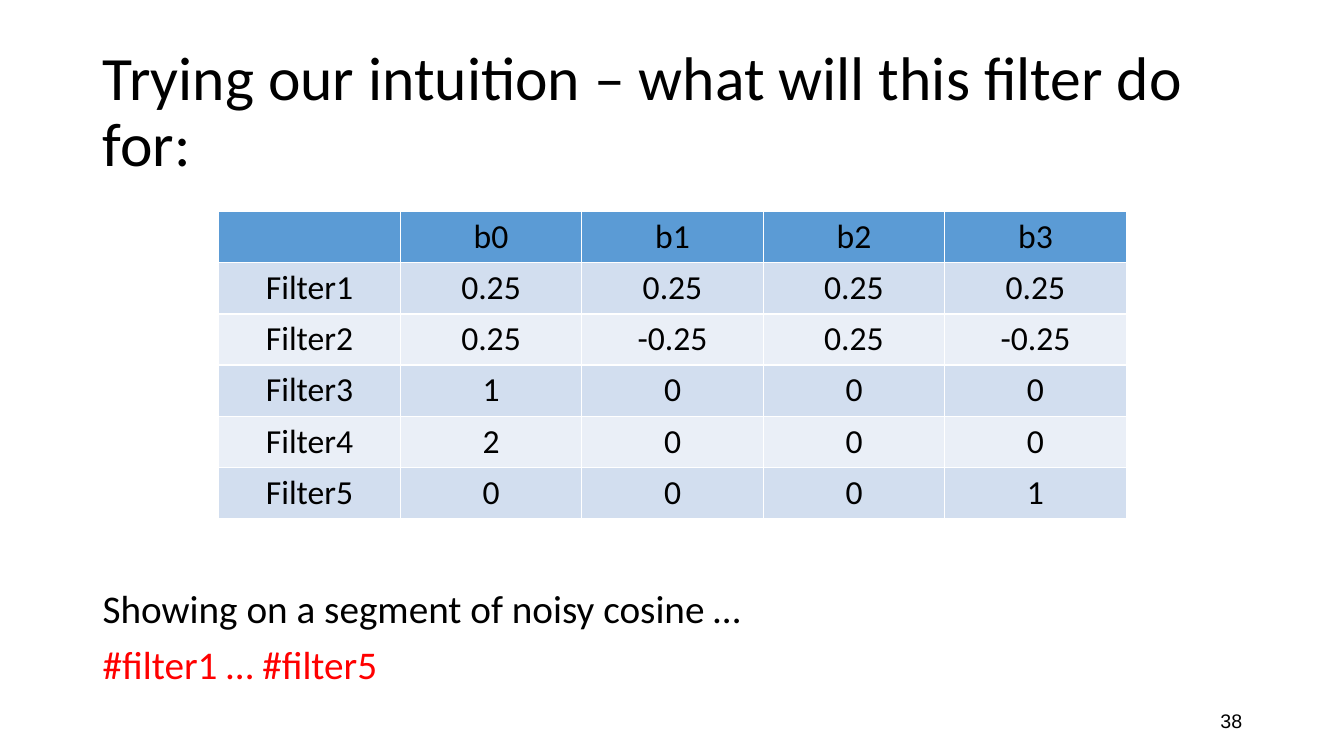
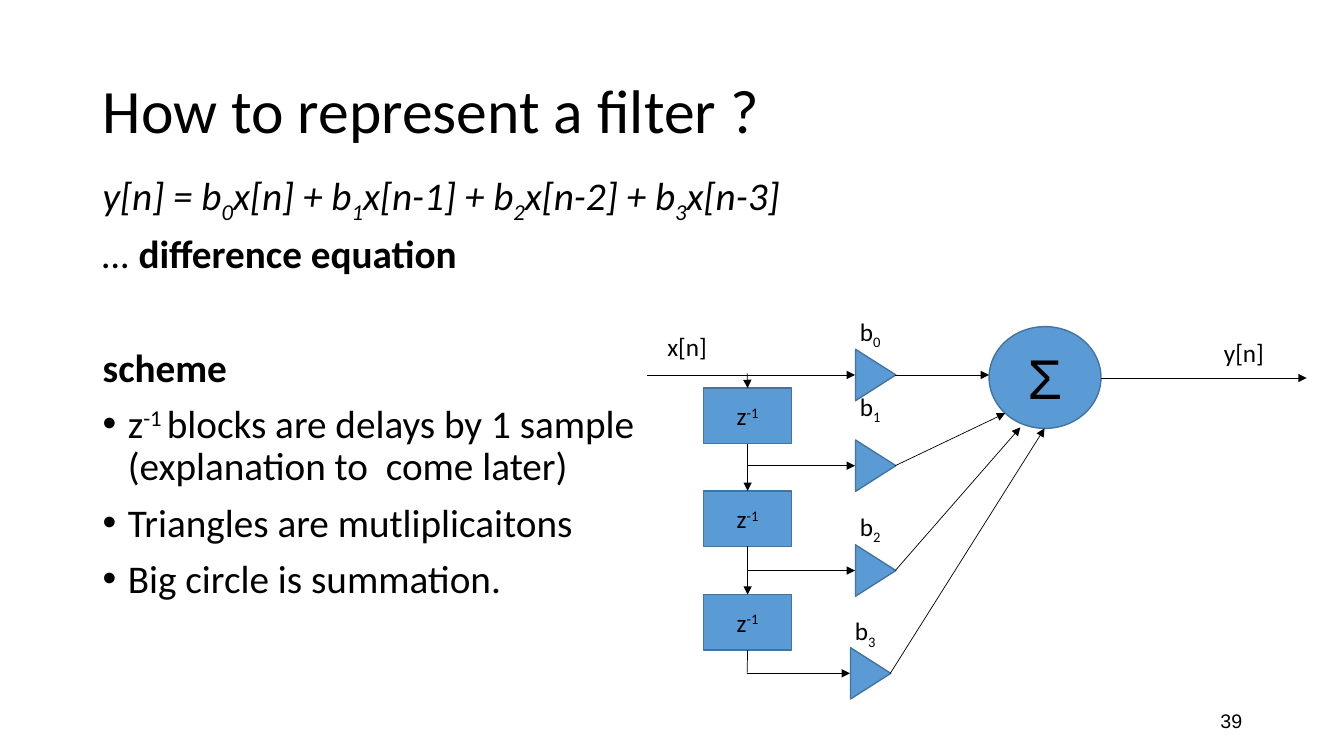
from dataclasses import dataclass

from lxml import etree
from pptx import Presentation
from pptx.dml.color import RGBColor
from pptx.enum.shapes import MSO_CONNECTOR, MSO_SHAPE
from pptx.enum.text import MSO_ANCHOR, MSO_AUTO_SIZE, PP_ALIGN
from pptx.oxml.ns import qn
from pptx.util import Inches, Pt

LEFT, CENTER, RIGHT = PP_ALIGN.LEFT, PP_ALIGN.CENTER, PP_ALIGN.RIGHT
TOP, MIDDLE = MSO_ANCHOR.TOP, MSO_ANCHOR.MIDDLE
NO_AUTOSIZE = MSO_AUTO_SIZE.NONE
RECTANGLE, ELLIPSE = MSO_SHAPE.RECTANGLE, MSO_SHAPE.OVAL
TRIANGLE = MSO_SHAPE.FLOWCHART_EXTRACT
STRAIGHT = MSO_CONNECTOR.STRAIGHT
TITLE_ONLY = 5
SITE_TOP, SITE_BOTTOM = 0, 2

BLACK, RED = "000000", "FF0000"
BLUE, BLUE_EDGE = "5B9BD5", "43739E"
BANDS = ("D2DEEF", "EAEFF7")
SUBSCRIPT, SUPERSCRIPT = -25000, 30000


def color(value):
    return RGBColor.from_string(value)


@dataclass
class Run:
    text: str
    baseline: int = 0
    bold: bool = False
    italic: bool = False
    fill: str = BLACK


@dataclass
class Paragraph:
    runs: list
    bullet: bool = False
    space_before: float = 10


class Deck:
    """Holds the shared style, the presentation and the current slide."""

    font = "Calibri"
    number_font = "Arial"
    title_size, body_size, table_size, label_size = 44, 28, 24, 18

    def __init__(self):
        self.presentation = Presentation()
        self.presentation.slide_width = Inches(13.33)
        self.presentation.slide_height = Inches(7.5)
        self.slide = None

    def add_slide(self, title, number):
        layout = self.presentation.slide_layouts[TITLE_ONLY]
        self.slide = self.presentation.slides.add_slide(layout)
        shape = self.slide.shapes.title
        shape.left, shape.top = Inches(0.92), Inches(0.4)
        shape.width, shape.height = Inches(11.5), Inches(1.45)
        frame = self.prepare_frame(shape, MIDDLE)
        frame.paragraphs[0].line_spacing = 0.9
        self.add_runs(frame.paragraphs[0], [Run(title)], self.title_size, LEFT)
        self.label(9.42, 6.95, 3, [Run(number)], 14, self.number_font, RIGHT, MIDDLE)

    def prepare_frame(self, shape, anchor):
        frame = shape.text_frame
        frame.word_wrap = True
        frame.auto_size = NO_AUTOSIZE
        frame.vertical_anchor = anchor
        return frame

    def add_runs(self, paragraph, runs, size, alignment=LEFT, font=None):
        """Add styled runs; a newline inside a run becomes a line break."""
        paragraph.alignment = alignment
        for item in runs:
            for index, line in enumerate(item.text.split("\n")):
                if index:
                    paragraph.add_line_break()
                run = paragraph.add_run()
                run.text = line
                run.font.name = font or self.font
                run.font.size = Pt(size)
                run.font.bold = item.bold
                run.font.italic = item.italic
                run.font.color.rgb = color(item.fill)
                if item.baseline:
                    run._r.get_or_add_rPr().set("baseline", str(item.baseline))

    def label(self, left, top, width, runs, size=label_size, font=None,
              alignment=LEFT, anchor=TOP):
        box = self.slide.shapes.add_textbox(
            Inches(left), Inches(top), Inches(width), Inches(0.4))
        frame = self.prepare_frame(box, anchor)
        self.add_runs(frame.paragraphs[0], runs, size, alignment, font)

    def body(self, left, top, width, height, paragraphs):
        box = self.slide.shapes.add_textbox(
            Inches(left), Inches(top), Inches(width), Inches(height))
        frame = self.prepare_frame(box, TOP)
        for index, item in enumerate(paragraphs):
            paragraph = frame.add_paragraph() if index else frame.paragraphs[0]
            if item.bullet:
                self.add_bullet(paragraph)
            paragraph.line_spacing = 0.9
            paragraph.space_before = Pt(item.space_before if index else 0)
            self.add_runs(paragraph, item.runs, self.body_size)

    def add_bullet(self, paragraph):
        properties = paragraph._p.get_or_add_pPr()
        properties.set("marL", str(Inches(0.25)))
        properties.set("indent", str(-Inches(0.25)))
        font = etree.SubElement(properties, qn("a:buFont"))
        font.set("typeface", "Arial")
        etree.SubElement(properties, qn("a:buChar")).set("char", "•")

    def table(self, left, top, column_width, row_height, rows):
        columns = len(rows[0])
        table = self.slide.shapes.add_table(
            len(rows), columns, Inches(left), Inches(top),
            Inches(column_width * columns), Inches(row_height * len(rows))).table
        for row_index, row in enumerate(rows):
            fill = BANDS[(row_index - 1) % 2] if row_index else BLUE
            for column_index, text in enumerate(row):
                cell = table.cell(row_index, column_index)
                cell.fill.solid()
                cell.fill.fore_color.rgb = color(fill)
                if text:
                    paragraph = cell.text_frame.paragraphs[0]
                    self.add_runs(paragraph, [Run(text)], self.table_size, CENTER)

    def block(self, kind, left, top, width, height, runs=(), size=label_size,
              font=None, rotation=0):
        shape = self.slide.shapes.add_shape(
            kind, Inches(left), Inches(top), Inches(width), Inches(height))
        shape.shadow.inherit = False
        shape.rotation = rotation
        shape.fill.solid()
        shape.fill.fore_color.rgb = color(BLUE)
        shape.line.color.rgb = color(BLUE_EDGE)
        shape.line.width = Pt(1)
        frame = self.prepare_frame(shape, MIDDLE)
        self.add_runs(frame.paragraphs[0], runs, size, CENTER, font)
        return shape

    def line(self, start=(0, 0), end=(0, 0), begin_at=None, end_at=None, arrow=True):
        """Draw a line; begin_at and end_at are (shape, site) joins."""
        connector = self.slide.shapes.add_connector(
            STRAIGHT, *(Inches(value) for value in (*start, *end)))
        if begin_at:
            connector.begin_connect(*begin_at)
        if end_at:
            connector.end_connect(*end_at)
        connector.line.color.rgb = color(BLACK)
        connector.line.width = Pt(0.5)
        if arrow:
            outline = connector.line._get_or_add_ln()
            etree.SubElement(outline, qn("a:tailEnd")).set("type", "triangle")
        etree.SubElement(connector._element.spPr, qn("a:effectLst"))


def add_filter_table(deck):
    deck.add_slide("Trying our intuition – what will this filter do for:", "38")
    deck.table(2.17, 2.1, 1.8, 0.5, [
        ("", "b0", "b1", "b2", "b3"),
        ("Filter1", "0.25", "0.25", "0.25", "0.25"),
        ("Filter2", "0.25", "-0.25", "0.25", "-0.25"),
        ("Filter3", "1", "0", "0", "0"),
        ("Filter4", "2", "0", "0", "0"),
        ("Filter5", "0", "0", "0", "1"),
    ])
    deck.body(0.92, 5.8, 7.88, 1.35, [
        Paragraph([Run("Showing on a segment of noisy cosine …")]),
        Paragraph([Run("#filter1 … #filter5", fill=RED)]),
    ])


def difference_equation():
    runs = [Run("y[n] = ", italic=True)]
    for index in range(4):
        delayed = f"x[n-{index}]" if index else "x[n]"
        plus = " + " if index < 3 else ""
        runs += [Run("b", italic=True),
                 Run(str(index), SUBSCRIPT, italic=True),
                 Run(delayed + plus, italic=True)]
    return runs


def add_scheme(deck):
    deck.add_slide("How to represent a filter ?", "39")
    deck.body(0.92, 1.66, 11.5, 5.22, [
        Paragraph(difference_equation()),
        Paragraph([Run("… ", italic=True), Run("difference equation", bold=True)]),
        Paragraph([Run("scheme", bold=True)], space_before=51),
        Paragraph([Run("z"), Run("-1 ", SUPERSCRIPT),
                   Run("blocks are delays by 1 sample\n(explanation to  come later)")],
                  bullet=True),
        Paragraph([Run("Triangles are mutliplicaitons")], bullet=True),
        Paragraph([Run("Big circle is summation.")], bullet=True),
    ])

    delays = [deck.block(RECTANGLE, 6.98, top, 0.87, 0.55,
                         [Run("z"), Run("-1", SUPERSCRIPT)])
              for top in (3.85, 4.87, 5.9)]
    deck.line(start=(7.41, 3.7), end_at=(delays[0], SITE_TOP))
    for upper, lower in zip(delays, delays[1:]):
        deck.line(begin_at=(upper, SITE_BOTTOM), end_at=(lower, SITE_TOP))
    deck.line(end=(7.41, 6.68), begin_at=(delays[-1], SITE_BOTTOM), arrow=False)

    deck.block(ELLIPSE, 9.81, 3.24, 1.11, 1.01, [Run("Σ")], 40, "Arial")

    # Each tap: triangle centre, label top, input start, point on the sum circle
    taps = [
        (8.68, 3.72, 3.09, 6.42, (9.81, 3.72)),
        (8.68, 4.62, 3.83, 7.41, (9.97, 4.1)),
        (8.68, 5.66, 5.02, 7.41, (10.12, 4.24)),
        (8.63, 6.68, 6.06, 7.41, (10.36, 4.25)),
    ]
    for index, (center, middle, label_top, input_left, sum_point) in enumerate(taps):
        deck.block(TRIANGLE, center - 0.25, middle - 0.2, 0.51, 0.4, rotation=90)
        deck.label(center - 0.25, label_top, 0.45,
                   [Run("b"), Run(str(index), SUBSCRIPT)])
        deck.line((input_left, middle), (center - 0.2, middle))
        deck.line((center + 0.2, middle), sum_point)

    deck.line((10.92, 3.75), (12.96, 3.75))
    deck.label(6.52, 3.24, 0.92, [Run("x[n]")])
    deck.label(12.04, 3.3, 0.92, [Run("y[n]")])


def main():
    deck = Deck()
    add_filter_table(deck)
    add_scheme(deck)
    deck.presentation.save("out.pptx")


if __name__ == "__main__":
    main()
